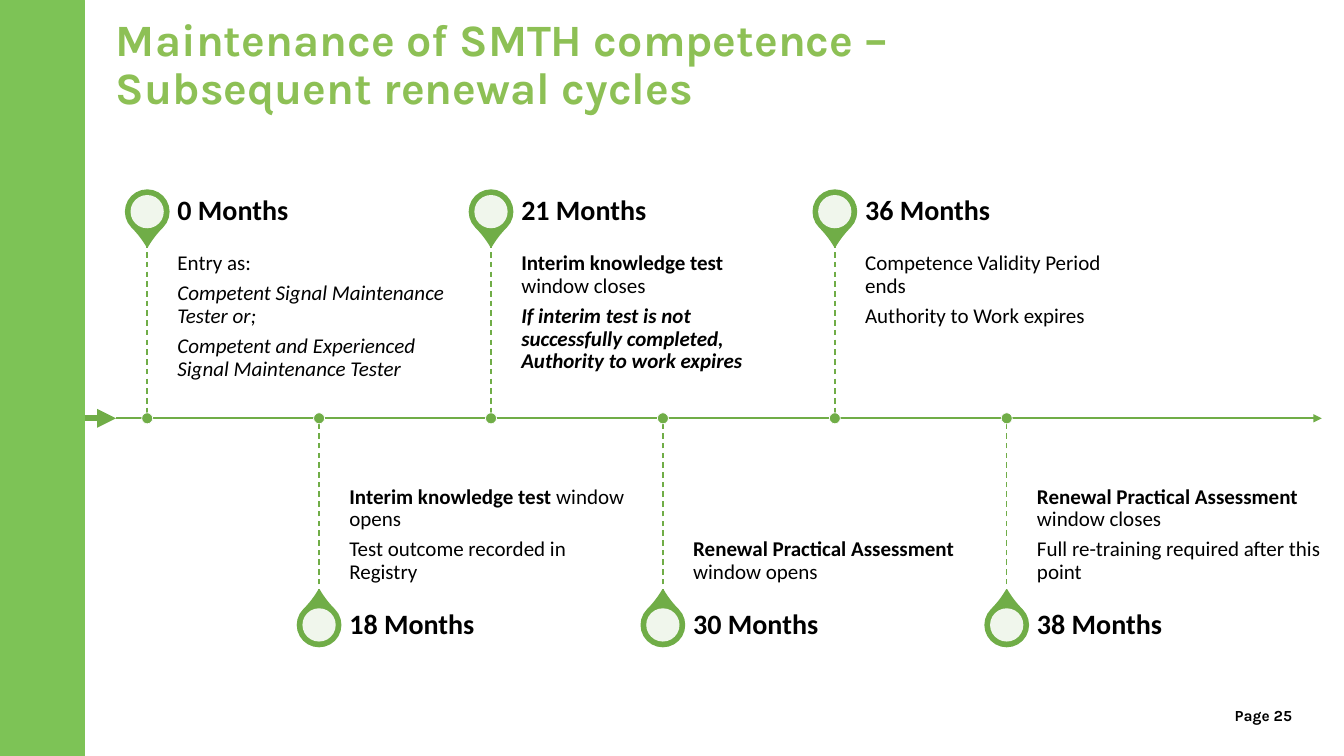
from lxml import etree
from pptx import Presentation
from pptx.dml.color import RGBColor
from pptx.enum.dml import MSO_LINE
from pptx.enum.shapes import MSO_CONNECTOR, MSO_SHAPE
from pptx.enum.text import MSO_ANCHOR, PP_ALIGN
from pptx.oxml.ns import qn
from pptx.util import Inches, Pt

# Content: each text is a list of paragraphs, each paragraph a list of (words, style)
TITLE = ["Maintenance of SMTH competence –", "Subsequent renewal cycles"]
PAGE_LABEL = "Page 25"
MILESTONES = [
    ("0 Months", [[("Entry as:", "")],
                  [("Competent Signal Maintenance Tester or;", "i")],
                  [("Competent and Experienced Signal Maintenance Tester", "i")]]),
    ("18 Months", [[("Interim knowledge test ", "b"), ("window opens", "")],
                   [("Test outcome recorded in Registry", "")]]),
    ("21 Months", [[("Interim knowledge test ", "b"), ("window closes", "")],
                   [("If interim test is not successfully completed, "
                     "Authority to work expires", "bi")]]),
    ("30 Months", [[("Renewal Practical Assessment ", "b"), ("window opens", "")]]),
    ("36 Months", [[("Competence Validity Period ends", "")],
                   [("Authority to Work expires", "")]]),
    ("38 Months", [[("Renewal Practical Assessment ", "b"), ("window closes", "")],
                   [("Full re-training required after this point", "")]]),
]

# Colours and fonts
GREEN, SIDE_GREEN, TITLE_GREEN = "70AD47", "7DC356", "8DC055"
WHITE, BLACK = "FFFFFF", "000000"
BODY_FONT, TITLE_FONT = "Calibri", "Karla"

# Grid, in inches
WIDTH, HEIGHT = 13.33, 7.5
SIDE, LEFT, RIGHT = 0.84, 1.15, 13.11
AXIS = 4.15
FIRST, STEP = 1.46, 1.705
STEM, HEADING = 1.745, 0.61
TEXT_GAP, TEXT_WIDTH = 0.3, 2.82
PIN, HOLE, DOT = 0.43, 0.33, 0.11

deck = Presentation()
deck.slide_width, deck.slide_height = Inches(WIDTH), Inches(HEIGHT)
page = deck.slides.add_slide(deck.slide_layouts[6])


def colour(value):
    return RGBColor.from_string(value)


def add_text(place, paragraphs, size, font=BODY_FONT, ink=BLACK, insets=(0, 0, 0, 0),
             anchor=MSO_ANCHOR.TOP, align=PP_ALIGN.LEFT, spacing=0.9, after=0):
    box = page.shapes.add_textbox(*map(Inches, place))
    frame = box.text_frame
    frame.word_wrap = True
    frame.vertical_anchor = anchor
    (frame.margin_left, frame.margin_top,
     frame.margin_right, frame.margin_bottom) = map(Inches, insets)
    for index, spans in enumerate(paragraphs):
        para = frame.add_paragraph() if index else frame.paragraphs[0]
        para.alignment, para.line_spacing = align, spacing
        para.space_after = Pt(after)
        for words, style in spans:
            if words == "\n":
                para.add_line_break()
                continue
            span = para.add_run()
            span.text = words
            span.font.name, span.font.size = font, Pt(size)
            span.font.bold, span.font.italic = "b" in style, "i" in style
            span.font.color.rgb = colour(ink)


def add_shape(kind, place, fill, line=None, weight=1):
    shape = page.shapes.add_shape(kind, *map(Inches, place))
    shape.shadow.inherit = False
    shape.fill.solid()
    shape.fill.fore_color.rgb = colour(fill)
    if line:
        shape.line.color.rgb = colour(line)
        shape.line.width = Pt(weight)
    else:
        shape.line.fill.background()
    return shape


def add_round(kind, x, y, size, fill, **line):
    return add_shape(kind, (x - size / 2, y - size / 2, size, size), fill, **line)


def add_line(start, end, weight, dashed=False, arrow=False):
    line = page.shapes.add_connector(MSO_CONNECTOR.STRAIGHT, *map(Inches, start + end))
    line.line.color.rgb = colour(GREEN)
    line.line.width = Pt(weight)
    if dashed:
        line.line.dash_style = MSO_LINE.DASH
    if arrow:
        etree.SubElement(line.line._get_or_add_ln(), qn("a:tailEnd"), type="triangle")
    etree.SubElement(line._element.spPr, qn("a:effectLst"))


def add_milestone(index, heading, details):
    above = index % 2 == 0
    x = FIRST + index * STEP
    text_left = x + TEXT_GAP
    tip = AXIS - STEM if above else AXIS + STEM
    heading_top = tip - HEADING if above else tip
    pin_y = heading_top + HEADING / 2

    # Pin
    pin = add_round(MSO_SHAPE.TEAR, x, pin_y, PIN, GREEN, line=GREEN)
    pin.adjustments[0] = 1.15
    pin.rotation = 135 if above else 315
    hole = add_round(MSO_SHAPE.OVAL, x, pin_y, HOLE, WHITE)
    tint = hole._element.spPr.find(qn("a:solidFill"))[0]
    etree.SubElement(tint, qn("a:alpha"), val="90000")

    # Texts
    add_text((text_left, min(tip, AXIS), TEXT_WIDTH, STEM), details, 15, after=5.25,
             insets=(0, 0.1, 0.1, 0.16) if above else (0, 0.16, 0, 0.1),
             anchor=MSO_ANCHOR.TOP if above else MSO_ANCHOR.BOTTOM)
    add_text((text_left, heading_top, TEXT_WIDTH, HEADING), [[(heading, "b")]], 20,
             insets=(0, 0, 0.14, 0), anchor=MSO_ANCHOR.MIDDLE)

    # Stem and dot on the axis
    add_line((x, tip), (x, AXIS), 1, dashed=True)
    add_round(MSO_SHAPE.OVAL, x, AXIS, DOT, GREEN, line=WHITE, weight=0.5)


# Frame of the page
add_shape(MSO_SHAPE.RECTANGLE, (0, 0, SIDE, HEIGHT), SIDE_GREEN, SIDE_GREEN, 0.5)
add_text((11.72, 7.01, 1.62, 0.19), [[(PAGE_LABEL, "b")]], 11, font=TITLE_FONT,
         align=PP_ALIGN.CENTER, spacing=1.0)
add_text((LEFT, 0, 11.81, 1.31), [[(TITLE[0], "b"), ("\n", ""), (TITLE[1], "b")]], 32,
         font=TITLE_FONT, ink=TITLE_GREEN, insets=(0, 0.05, 0, 0.05),
         anchor=MSO_ANCHOR.MIDDLE)

# Timeline
add_line((LEFT, AXIS), (RIGHT, AXIS), 1.5, arrow=True)
for number, (months, notes) in enumerate(MILESTONES):
    add_milestone(number, months, notes)
add_line((SIDE, AXIS), (LEFT, AXIS), 4.5, arrow=True)

deck.save("out.pptx")
